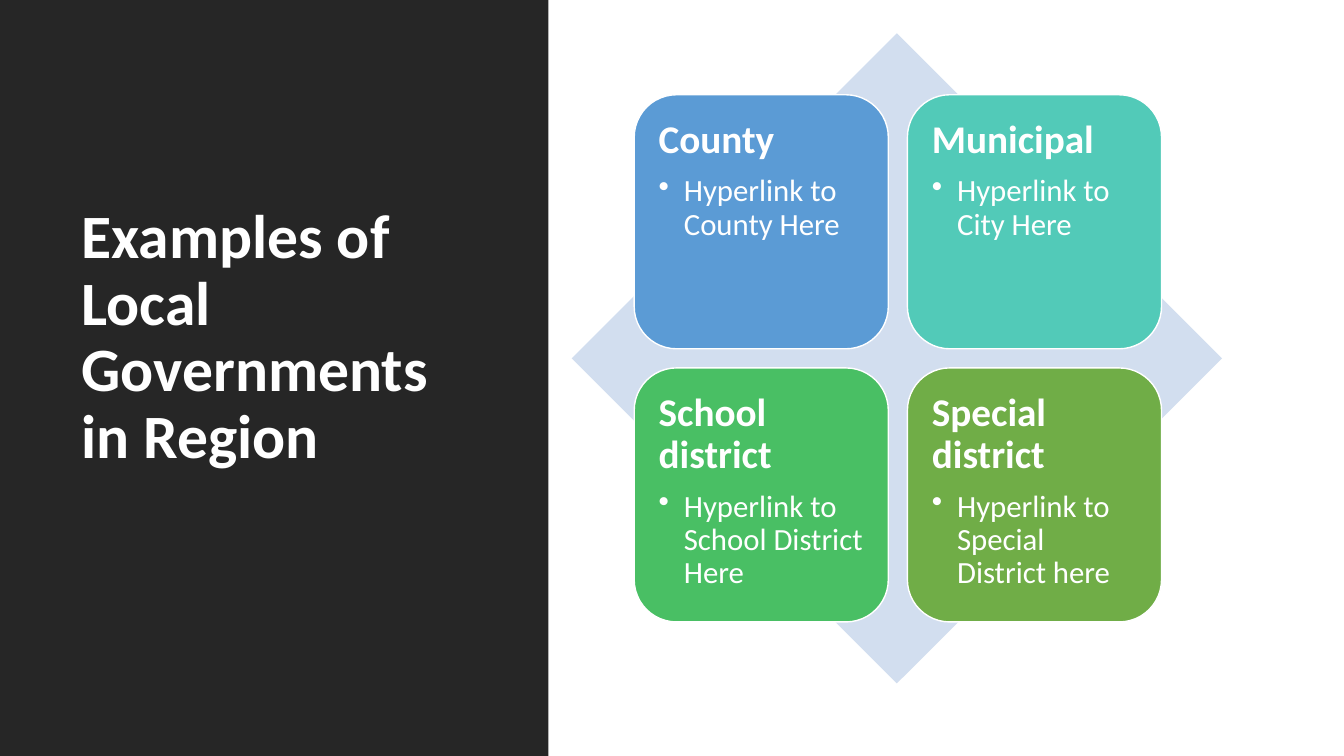
import pptx
import pptx.dml.color
import pptx.enum.shapes
import pptx.enum.text
import pptx.util
from lxml import etree

Inches = pptx.util.Inches
Pt = pptx.util.Pt
RGBColor = pptx.dml.color.RGBColor
MSO_SHAPE = pptx.enum.shapes.MSO_SHAPE
MSO_ANCHOR = pptx.enum.text.MSO_ANCHOR

WHITE = RGBColor(0xFF, 0xFF, 0xFF)
CHARCOAL = RGBColor(0x26, 0x26, 0x26)
PALE_BLUE = RGBColor(0xD2, 0xDE, 0xEF)
BLUE = RGBColor(0x5B, 0x9B, 0xD5)
TEAL = RGBColor(0x52, 0xCA, 0xB8)
GREEN = RGBColor(0x49, 0xBF, 0x64)
OLIVE = RGBColor(0x70, 0xAD, 0x47)

presentation = pptx.Presentation()
presentation.slide_width = Inches(13.33)
presentation.slide_height = Inches(7.5)
slide = presentation.slides.add_slide(presentation.slide_layouts[6])


def add_block(kind, left, top, width, height, fill, line=None):
    block = slide.shapes.add_shape(
        kind, Inches(left), Inches(top), Inches(width), Inches(height))
    block.shadow.inherit = False
    block.fill.solid()
    block.fill.fore_color.rgb = fill
    if line is None:
        block.line.fill.background()
    else:
        block.line.color.rgb = line
        block.line.width = Pt(1)
    return block


def write(paragraph, text, size, bold=False, space_after=0, bullet=False):
    paragraph.alignment = pptx.enum.text.PP_ALIGN.LEFT
    paragraph.line_spacing = 0.9
    paragraph.space_after = Pt(space_after)
    run = paragraph.add_run()
    run.text = text
    run.font.name = "Calibri"
    run.font.size = Pt(size)
    run.font.bold = bold
    run.font.color.rgb = WHITE
    if bullet:
        paragraph.level = 1
        properties = paragraph._p.get_or_add_pPr()
        properties.set("marL", str(Inches(0.25)))
        properties.set("indent", str(Inches(-0.25)))
        mark = etree.SubElement(properties, pptx.oxml.ns.qn("a:buChar"))
        mark.set("char", "•")


# Dark panel with the title
add_block(MSO_SHAPE.RECTANGLE, 0, 0, 5.44, 7.5, CHARCOAL)
title = slide.shapes.add_textbox(
    Inches(0.71), Inches(0.7), Inches(3.69), Inches(4.03)).text_frame
title.word_wrap = True
title.vertical_anchor = MSO_ANCHOR.BOTTOM
write(title.paragraphs[0], "Examples of Local Governments in Region", 44, bold=True)

# Diamond behind the cards
add_block(MSO_SHAPE.DIAMOND, 5.67, 0.33, 6.45, 6.45, PALE_BLUE)

# Two by two grid of government types
governments = [
    ("County", "Hyperlink to County Here", BLUE),
    ("Municipal", "Hyperlink to City Here", TEAL),
    ("School district", "Hyperlink to School District Here", GREEN),
    ("Special district", "Hyperlink to Special District here", OLIVE),
]
CARD_SIZE = 2.52
CARD_STEP = 2.71
for index, (government, link_note, color) in enumerate(governments):
    row, column = divmod(index, 2)
    card = add_block(
        MSO_SHAPE.ROUNDED_RECTANGLE,
        6.29 + column * CARD_STEP, 0.94 + row * CARD_STEP,
        CARD_SIZE, CARD_SIZE, color, line=WHITE)
    frame = card.text_frame
    frame.word_wrap = True
    frame.vertical_anchor = MSO_ANCHOR.TOP
    frame.margin_left = frame.margin_right = Inches(0.12)
    frame.margin_top = frame.margin_bottom = Inches(0.12)
    write(frame.paragraphs[0], government, 28, bold=True, space_after=9.8)
    write(frame.add_paragraph(), link_note, 22, space_after=3.3, bullet=True)

presentation.save("out.pptx")
